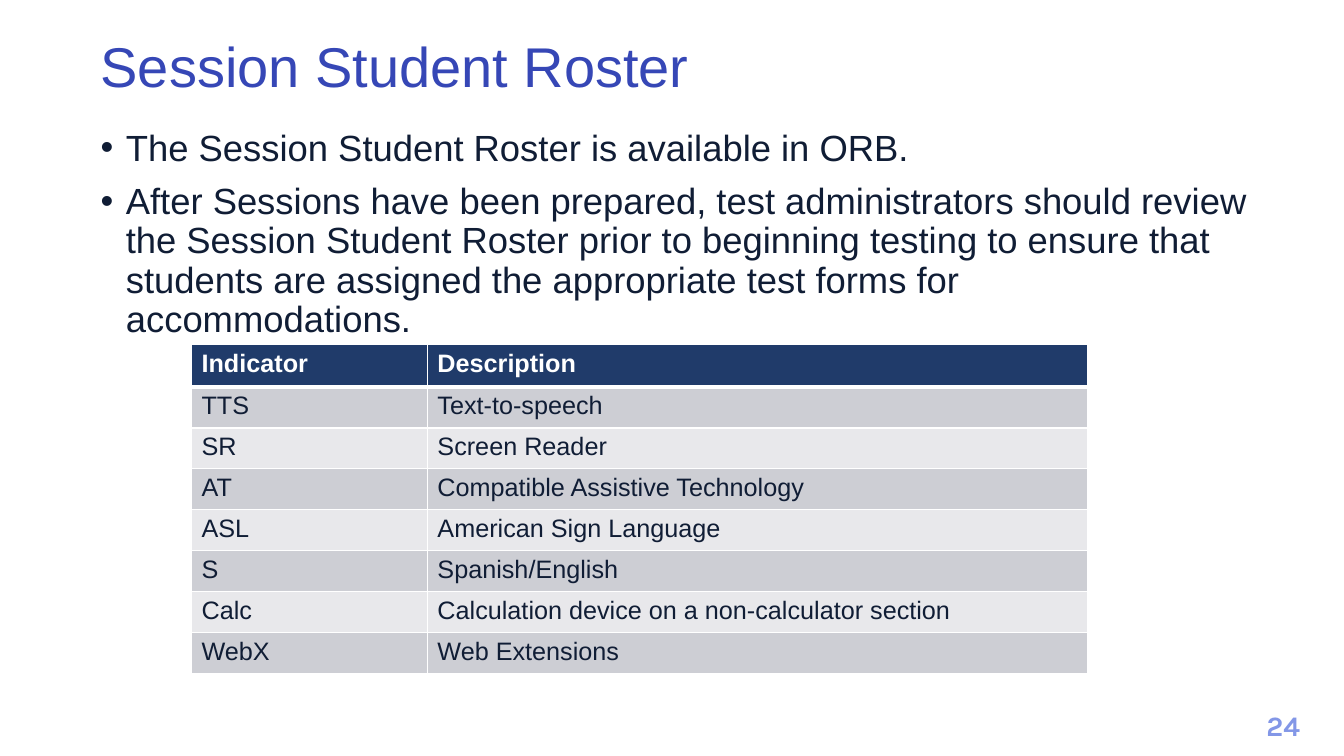
"""Build the Session Student Roster slide with its table of indicators."""
from typing import NamedTuple

from lxml.etree import SubElement
from pptx import Presentation
from pptx.dml.color import RGBColor as RGB
from pptx.enum.text import MSO_ANCHOR as ANCHOR, PP_ALIGN as ALIGN
from pptx.oxml.ns import qn
from pptx.util import Inches, Pt

COLORS = {"white": "FFFFFF", "title": "3647B6", "ink": "101D35", "page": "8397E7",
          "header": "203B6A", "odd": "CDCED4", "even": "E8E8EB"}
WIDTH, HEIGHT = Inches(13.33), Inches(7.5)


class Box(NamedTuple):
    """Position and size in percent of the slide."""
    left: float
    top: float
    width: float
    height: float

    def emu(self) -> tuple[int, ...]:
        """Return the box in slide units."""
        sides = (WIDTH, HEIGHT, WIDTH, HEIGHT)
        return tuple(round(side * share / 100) for side, share in zip(sides, self))


class Indicator(NamedTuple):
    """One row of the roster table."""
    code: str
    description: str


PAGE_BOX = Box(93.15, 93.07, 4.65, 5.87)
TITLE_BOX = Box(6.75, 4.27, 93.25, 9.87)
BODY_BOX = Box(6.75, 16.53, 87.15, 73.6)
COLUMNS = (17.55, 49.12)
HEADER_ROW, DATA_ROW = 5.6, 5.41

BULLETS = (
    "The Session Student Roster is available in ORB.",
    "After Sessions have been prepared, test administrators should review the Session "
    "Student Roster prior to beginning testing to ensure that students are assigned the "
    "appropriate test forms for accommodations.",
)
ROWS = (
    Indicator("Indicator", "Description"),
    Indicator("TTS", "Text-to-speech"),
    Indicator("SR", "Screen Reader"),
    Indicator("AT", "Compatible Assistive Technology"),
    Indicator("ASL", "American Sign Language"),
    Indicator("S", "Spanish/English"),
    Indicator("Calc", "Calculation device on a non-calculator section"),
    Indicator("WebX", "Web Extensions"),
)
TABLE_BOX = Box(14.25, 45.6, sum(COLUMNS), HEADER_ROW + DATA_ROW * (len(ROWS) - 1))


def write(tf, *texts: str, size: float, color: str, font: str = "Arial", bold: bool = False,
          align=ALIGN.LEFT, spacing: float = 1.0, before: float = 0,
          bullet: bool = False) -> None:
    """Write one formatted paragraph for each text."""
    for i, text in enumerate(texts):
        p = tf.add_paragraph() if i else tf.paragraphs[0]
        p.alignment, p.line_spacing = align, spacing
        p.space_before = Pt(before if i else 0)
        if bullet:
            pPr = p._p.get_or_add_pPr()
            pPr.set("marL", str(Inches(0.25)))
            pPr.set("indent", str(-Inches(0.25)))
            SubElement(pPr, qn("a:buFont"), typeface="Arial")
            SubElement(pPr, qn("a:buChar"), char="•")
        r = p.add_run()
        r.text = text
        r.font.name, r.font.size, r.font.bold = font, Pt(size), bold
        r.font.color.rgb = RGB.from_string(COLORS[color])


def add_text(slide, box: Box, *texts: str, anchor=ANCHOR.TOP, **style) -> None:
    """Add a wrapping text box."""
    tf = slide.shapes.add_textbox(*box.emu()).text_frame
    tf.word_wrap, tf.vertical_anchor = True, anchor
    write(tf, *texts, **style)


def fill_cell(cell, color: str, top: float, bottom: float) -> None:
    """Give a cell white borders and a solid fill."""
    tcPr = cell._tc.get_or_add_tcPr()
    for side, width in (("L", 1), ("R", 1), ("T", top), ("B", bottom)):
        ln = SubElement(tcPr, qn(f"a:ln{side}"), w=str(Pt(width)))
        fill = SubElement(ln, qn("a:solidFill"))
        SubElement(fill, qn("a:srgbClr"), val=COLORS["white"])
    cell.fill.solid()
    cell.fill.fore_color.rgb = RGB.from_string(COLORS[color])


def add_roster(slide) -> None:
    """Add the table of indicators."""
    table = slide.shapes.add_table(len(ROWS), len(COLUMNS), *TABLE_BOX.emu()).table
    for column, share in zip(table.columns, COLUMNS):
        column.width = round(WIDTH * share / 100)
    for i, row in enumerate(ROWS):
        header = i == 0
        table.rows[i].height = round(HEIGHT * (HEADER_ROW if header else DATA_ROW) / 100)
        color = "header" if header else "odd" if i % 2 else "even"
        for j, text in enumerate(row):
            cell = table.cell(i, j)
            fill_cell(cell, color, top=3 if i == 1 else 1, bottom=3 if header else 1)
            write(cell.text_frame, text, size=18, bold=header,
                  color="white" if header else "ink")


def main() -> None:
    """Build and save the slide."""
    prs = Presentation()
    prs.slide_width, prs.slide_height = WIDTH, HEIGHT
    s = prs.slides.add_slide(prs.slide_layouts[6])
    add_text(s, PAGE_BOX, "24", size=20, color="page", font="Karla", bold=True,
             align=ALIGN.CENTER)
    add_text(s, TITLE_BOX, "Session Student Roster", size=40, color="title", spacing=0.9,
             anchor=ANCHOR.MIDDLE)
    add_text(s, BODY_BOX, *BULLETS, size=26, color="ink", spacing=0.9, before=10, bullet=True)
    add_roster(s)
    prs.save("out.pptx")


if __name__ == "__main__":
    main()
